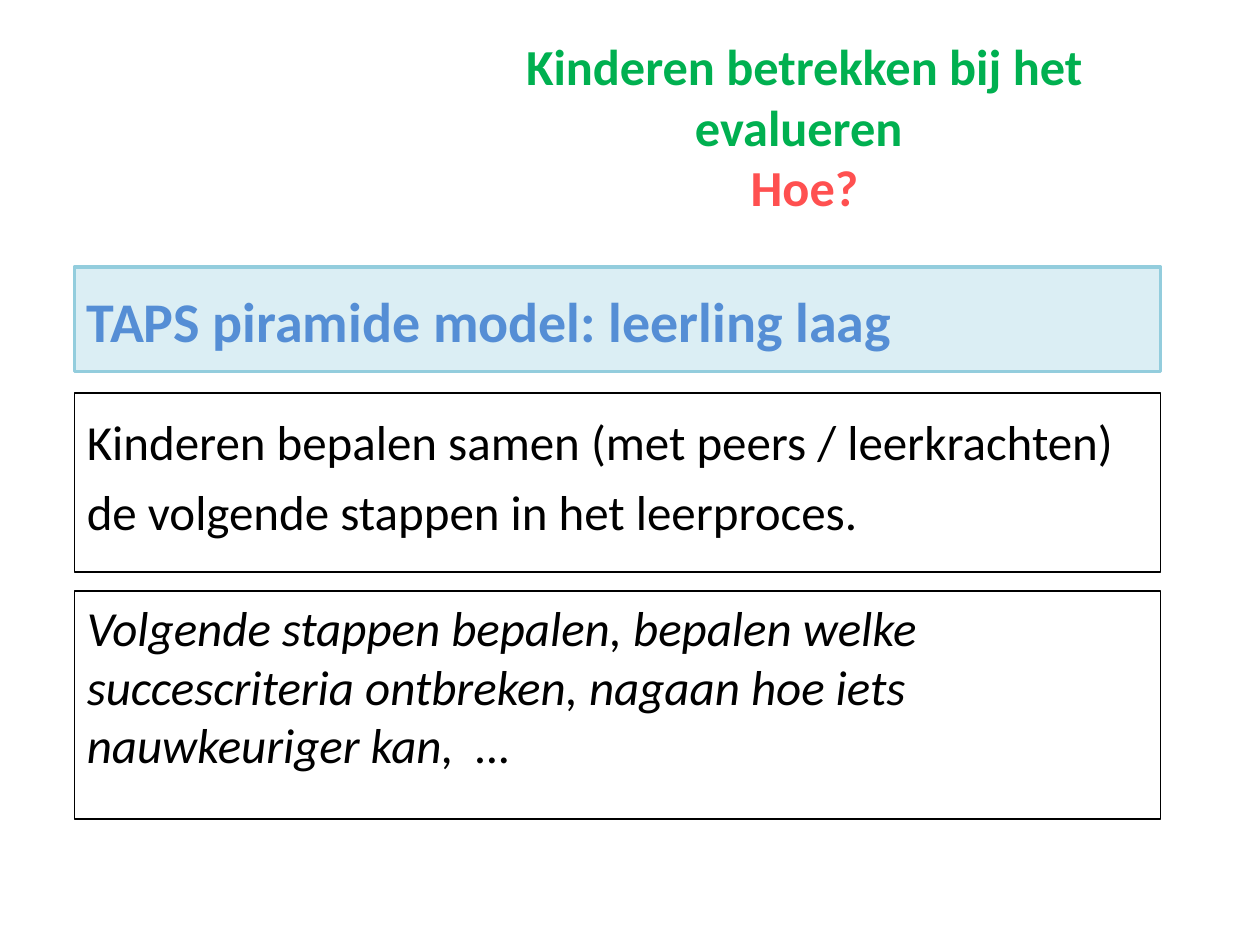
from dataclasses import dataclass

from pptx import Presentation
from pptx import util as u
from pptx.dml.color import RGBColor
from pptx.enum import shapes, text


@dataclass(frozen=True)
class Theme:
    """Colours, font and type sizes of the slide."""
    font: str = "Calibri"
    green: str = "00B050"
    red: str = "FF5050"
    blue: str = "558ED5"
    pale: str = "DBEEF4"
    edge: str = "93CDDD"
    ink: str = "000000"
    title: float = 28.8
    head: float = 32
    body: float = 28


THEME = Theme()


def add_run(para, words, size, color, bold=False, italic=False):
    """Append one styled run to a paragraph."""
    run = para.add_run()
    run.text = words
    font = run.font
    font.name, font.size = THEME.font, u.Pt(size)
    font.bold, font.italic = bold, italic
    font.color.rgb = RGBColor.from_string(color)


def add_title(slide, box):
    """Place the centred two-colour title in the box."""
    frame = slide.shapes.add_textbox(*map(u.Inches, box)).text_frame
    frame.word_wrap = True
    frame.vertical_anchor = text.MSO_ANCHOR.MIDDLE
    para = frame.paragraphs[0]
    para.alignment = text.PP_ALIGN.CENTER
    add_run(para, "Kinderen betrekken bij het evalueren ", THEME.title, THEME.green, bold=True)
    para.add_line_break()
    add_run(para, "Hoe?", THEME.title, THEME.red, bold=True)


def add_panel(slide, box, words, size, color, edge, width, fill=None, spacing=1.0, **style):
    """Place an outlined panel with left-aligned text in the box."""
    panel = slide.shapes.add_shape(shapes.MSO_SHAPE.RECTANGLE, *map(u.Inches, box))
    panel.shadow.inherit = False
    if fill:
        panel.fill.solid()
        panel.fill.fore_color.rgb = RGBColor.from_string(fill)
    else:
        panel.fill.background()
    panel.line.color.rgb = RGBColor.from_string(edge)
    panel.line.width = u.Pt(width)
    frame = panel.text_frame
    frame.word_wrap = True
    frame.vertical_anchor = text.MSO_ANCHOR.TOP
    para = frame.paragraphs[0]
    para.alignment = text.PP_ALIGN.LEFT
    para.line_spacing = spacing
    add_run(para, words, size, color, **style)


def add_stack(slide, left, width):
    """Place the heading and its two text panels in one column."""
    add_panel(slide, (left, 2.12, width, 0.83), "TAPS piramide model: leerling laag",
              THEME.head, THEME.blue, THEME.edge, 2, THEME.pale, 1.2, bold=True)
    add_panel(slide, (left, 3.12, width, 1.42),
              "Kinderen bepalen samen (met peers / leerkrachten) "
              "de volgende stappen in het leerproces.",
              THEME.body, THEME.ink, THEME.ink, 0.75, spacing=1.2)
    add_panel(slide, (left, 4.69, width, 1.81),
              "Volgende stappen bepalen, bepalen welke succescriteria ontbreken, "
              "nagaan hoe iets nauwkeuriger kan,  …",
              THEME.body, THEME.ink, THEME.ink, 0.75, italic=True)


def main():
    """Build the slide and save it."""
    deck = Presentation()
    deck.slide_width, deck.slide_height = u.Inches(10), u.Inches(7.5)
    slide = deck.slides.add_slide(deck.slide_layouts[6])
    add_title(slide, (3.27, 0.3, 6.23, 1.4))
    add_stack(slide, 0.59, 8.62)
    deck.save("out.pptx")


if __name__ == "__main__":
    main()
